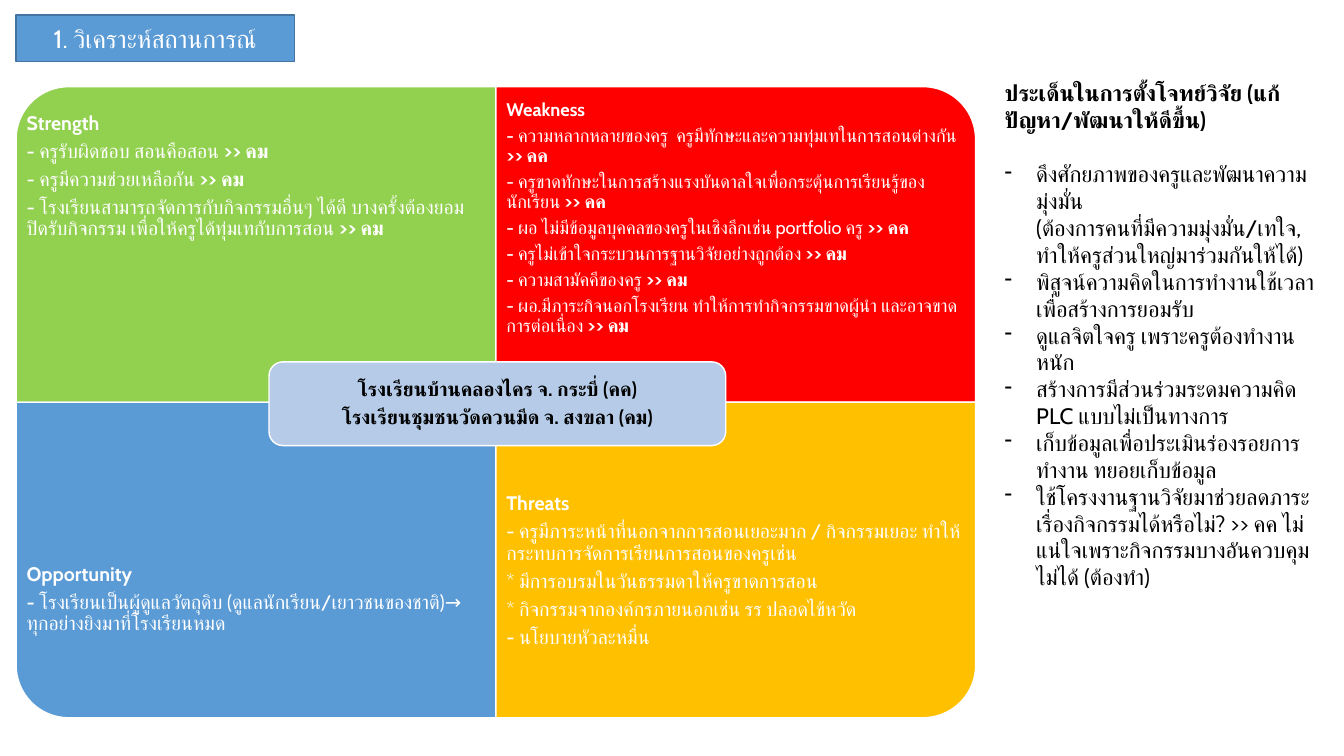
import pptx
import pptx.util
import pptx.dml.color
import pptx.enum.shapes
import pptx.enum.text
import pptx.oxml.ns
import lxml.etree

Pt = pptx.util.Pt
RGBColor = pptx.dml.color.RGBColor
SHAPE = pptx.enum.shapes.MSO_SHAPE
ANCHOR = pptx.enum.text.MSO_ANCHOR
ALIGN = pptx.enum.text.PP_ALIGN
qn = pptx.oxml.ns.qn

WHITE = RGBColor(0xFF, 0xFF, 0xFF)
BLACK = RGBColor(0, 0, 0)
BLUE = RGBColor(0x5B, 0x9B, 0xD5)
NAVY = RGBColor(0x43, 0x73, 0x9E)
GREEN = RGBColor(0x92, 0xD0, 0x50)
RED = RGBColor(0xFF, 0, 0)
AMBER = RGBColor(0xFF, 0xC0, 0)
PALE = RGBColor(0xB5, 0xCB, 0xE7)

LEFT, TOP, W, H = 11.5, 61.9, 342.7, 225.4
TEXT_H = 0.75 * H

STRENGTH = [
    ("Strength",),
    ("- ", "ครูรับผิดชอบ สอนคือสอน ", ">> คม"),
    ("", "- ครูมีความช่วยเหลือกัน ", ">> คม"),
    ("", "- โรงเรียนสามารถจัดการกับกิจกรรมอื่นๆ ได้ดี บางครั้งต้องยอมปิดรับกิจกรรม เพื่อให้ครูได้ทุ่มเทกับการสอน ", ">> คม"),
]
WEAKNESS = [
    ("Weakness",),
    ("- ", "ความหลากหลายของครู  ครูมีทักษะและความทุ่มเทในการสอนต่างกัน ", ">> คค"),
    ("", "- ครูขาดทักษะในการสร้างแรงบันดาลใจเพื่อกระตุ้นการเรียนรู้ของนักเรียน ", ">> คค"),
    ("- ", "ผอ ไม่มีข้อมูลบุคคลของครูในเชิงลึกเช่น portfolio ครู ", ">> คค"),
    ("- ", "ครูไม่เข้าใจกระบวนการฐานวิจัยอย่างถูกต้อง ", ">> คม"),
    ("- ", "ความสามัคคีของครู ", ">> คม"),
    ("", "- ผอ.มีภาระกิจนอกโรงเรียน ทำให้การทำกิจกรรมขาดผู้นำ และอาจขาดการต่อเนื่อง ", ">> คม"),
]
OPPORTUNITY = [
    ("Opportunity",),
    ("- ", "โรงเรียนเป็นผู้ดูแลวัตถุดิบ (ดูแลนักเรียน/เยาวชนของชาติ)→ ทุกอย่างยิงมาที่โรงเรียนหมด"),
]
THREATS = [
    ("Threats",),
    ("", "- ครูมีภาระหน้าที่นอกจากการสอนเยอะมาก / กิจกรรมเยอะ ทำให้กระทบการจัดการเรียนการสอนของครูเช่น"),
    ("", "* มีการอบรมในวันธรรมดาให้ครูขาดการสอน"),
    ("", "* กิจกรรมจากองค์กรภายนอกเช่น รร ปลอดไข้หวัด"),
    ("", "- นโยบายหัวละหมื่น"),
]
SCHOOLS = [("โรงเรียนบ้านคลองไคร จ. กระบี่ (คค)",), ("โรงเรียนชุมชนวัดควนมีด จ. สงขลา (คม)",)]
ISSUES_HEAD = [("ประเด็นในการตั้งโจทย์วิจัย (แก้ปัญหา/พัฒนาให้ดีขึ้น)",)]
ISSUES = [("", text) for text in (
    "ดึงศักยภาพของครูและพัฒนาความมุ่งมั่น\n(ต้องการคนที่มีความมุ่งมั่น/เทใจ, ทำให้ครูส่วนใหญ่มาร่วมกันให้ได้)",
    "พิสูจน์ความคิดในการทำงานใช้เวลาเพื่อสร้างการยอมรับ",
    "ดูแลจิตใจครู เพราะครูต้องทำงานหนัก",
    "สร้างการมีส่วนร่วมระดมความคิด PLC แบบไม่เป็นทางการ",
    "เก็บข้อมูลเพื่อประเมินร่องรอยการทำงาน ทยอยเก็บข้อมูล",
    "ใช้โครงงานฐานวิจัยมาช่วยลดภาระเรื่องกิจกรรมได้หรือไม่? >> คค ไม่แน่ใจเพราะกิจกรรมบางอันควบคุมไม่ได้ (ต้องทำ)",
)]


def style(target, values):
    for name, value in values.items():
        setattr(target, name, value)


class Board:
    """Draws styled shapes and text on one slide."""

    font = "Cabin"

    def __init__(self, slide):
        self.s = slide

    def shape(self, kind, x, y, w, h, fill, line=WHITE, rotation=0):
        sp = self.s.shapes.add_shape(kind, Pt(x), Pt(y), Pt(w), Pt(h))
        sp.shadow.inherit = False
        sp.rotation = rotation
        sp.fill.solid()
        sp.fill.fore_color.rgb = fill
        sp.line.color.rgb = line
        sp.line.width = Pt(1)
        return sp

    def textbox(self, x, y, w, h, **frame):
        sp = self.s.shapes.add_textbox(Pt(x), Pt(y), Pt(w), Pt(h))
        style(sp.text_frame, {"word_wrap": True, **frame})
        return sp

    def add_text(self, p, text, size, color, bold):
        for i, piece in enumerate(text.split("\n")):
            if i:
                p.add_line_break()
                lxml.etree.SubElement(p._p[-1], qn("a:rPr"), sz=str(size * 100))
            r = p.add_run()
            r.text = piece
            style(r.font, {"name": self.font, "size": Pt(size), "bold": bold})
            r.font.color.rgb = color
            lxml.etree.SubElement(r._r.get_or_add_rPr(), qn("a:cs"), typeface=self.font)

    def add_paragraphs(self, sp, paragraphs, size, color, bullet=None, **form):
        tf = sp.text_frame
        for runs in paragraphs:
            p = tf.add_paragraph() if tf.paragraphs[0].runs else tf.paragraphs[0]
            style(p, {"alignment": ALIGN.LEFT, **form})
            if bullet:
                pPr = p._p.get_or_add_pPr()
                pPr.set("marL", str(Pt(22.5)))
                pPr.set("indent", str(-Pt(22.5)))
                lxml.etree.SubElement(pPr, qn("a:buFontTx"))
                lxml.etree.SubElement(pPr, qn("a:buChar"), char=bullet)
            for i, text in enumerate(runs):
                if text:
                    self.add_text(p, text, size, color, i % 2 == 0)

    def quadrant(self, col, row, fill, rotation, paragraphs, size, **frame):
        x, y = LEFT + col * W, TOP + row * H
        w, h = (H, W) if rotation % 180 else (W, H)
        self.shape(SHAPE.ROUND_1_RECTANGLE, x + (W - w) / 2, y + (H - h) / 2, w, h, fill, rotation=rotation)
        margins = {f"margin_{side}": Pt(7.6) for side in ("left", "right", "top", "bottom")}
        sp = self.textbox(x, y + row * (H - TEXT_H), W, TEXT_H,
                          **{"vertical_anchor": ANCHOR.MIDDLE, **margins, **frame})
        self.add_paragraphs(sp, paragraphs, size, WHITE, line_spacing=0.9, space_after=Pt(0.35 * size))


def main():
    prs = pptx.Presentation()
    prs.slide_width, prs.slide_height = Pt(960), Pt(540)
    board = Board(prs.slides.add_slide(prs.slide_layouts[6]))

    title = board.shape(SHAPE.RECTANGLE, 11.5, 10.8, 198.7, 33.1, BLUE, NAVY)
    title.text_frame.vertical_anchor = ANCHOR.MIDDLE
    board.add_paragraphs(title, [("", "1. วิเคราะห์สถานการณ์")], 18, WHITE, alignment=ALIGN.CENTER)

    raised = {"margin_bottom": Pt(48)}
    hung = {"vertical_anchor": ANCHOR.TOP, "margin_top": Pt(10.3)}
    board.quadrant(0, 0, GREEN, 270, STRENGTH, 14, **raised)
    board.quadrant(1, 0, RED, 0, WEAKNESS, 13, **hung)
    board.quadrant(0, 1, BLUE, 180, OPPORTUNITY, 14)
    board.quadrant(1, 1, AMBER, 90, THREATS, 14, **raised)

    schools = board.shape(SHAPE.ROUNDED_RECTANGLE, 192.2, 258.5, 326.2, 59.8, PALE)
    schools.text_frame.vertical_anchor = ANCHOR.MIDDLE
    board.add_paragraphs(schools, SCHOOLS, 14, BLACK, alignment=ALIGN.CENTER, line_spacing=0.9, space_after=Pt(4.9))

    issues = board.textbox(710.6, 53.3, 236.9, 395.3)
    board.add_paragraphs(issues, ISSUES_HEAD, 16, BLACK, space_after=Pt(19.4))
    board.add_paragraphs(issues, ISSUES, 16, BLACK, bullet="-")
    prs.save("out.pptx")


if __name__ == "__main__":
    main()
